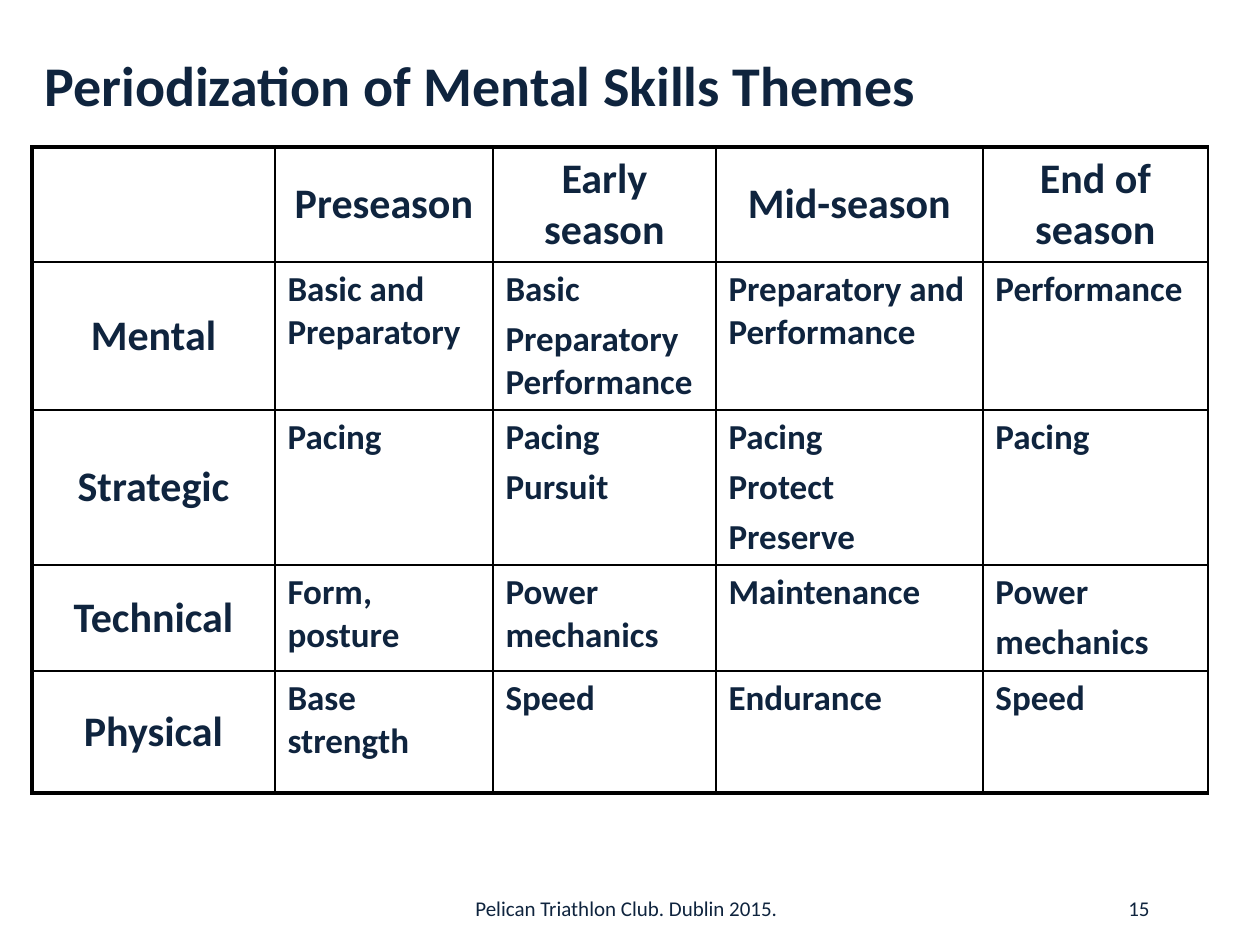
"""Build a slide with a season-by-season table of mental skills themes."""
from lxml import etree
from pptx import Presentation
from pptx.dml.color import RGBColor
from pptx.enum.text import MSO_ANCHOR, PP_ALIGN
from pptx.oxml.ns import qn
from pptx.util import Emu, Pt

NAVY = RGBColor(0x0F, 0x24, 0x3E)
BLACK = RGBColor(0, 0, 0)
THIN, THICK = 1, 2.25
PX = 914400 / 126


def write(tf, lines, size, bold, align, before=0):
    for i, line in enumerate(lines):
        p = tf.paragraphs[0] if i == 0 else tf.add_paragraph()
        p.alignment = align
        p.space_before = Pt(before)
        r = p.add_run()
        r.text = line
        for name, value in {"name": "Calibri", "size": Pt(size), "bold": bold}.items():
            setattr(r.font, name, value)
        r.font.color.rgb = NAVY


def border(cell, widths):
    tc_pr = cell._tc.get_or_add_tcPr()
    for side, width in widths.items():
        ln = etree.SubElement(tc_pr, qn(f"a:ln{side}"), w=str(Pt(width)))
        fill = etree.SubElement(ln, qn("a:solidFill"))
        etree.SubElement(fill, qn("a:srgbClr"), val=str(BLACK))


prs = Presentation()
prs.slide_width, prs.slide_height = Emu(round(1260 * PX)), Emu(round(945 * PX))
s = prs.slides.add_slide(prs.slide_layouts[6])

texts = [
    ("Periodization of Mental Skills Themes", (32, 21, 1081, 126), 32, True, PP_ALIGN.LEFT),
    ("Pelican Triathlon Club. Dublin 2015.", (427, 877, 399, 63), 12, False, PP_ALIGN.CENTER),
    ("15", (900, 877, 262, 63), 12, False, PP_ALIGN.RIGHT),
]
for text, box, size, bold, align in texts:
    tf = s.shapes.add_textbox(*(Emu(round(n * PX)) for n in box)).text_frame
    tf.word_wrap = True
    tf.vertical_anchor = MSO_ANCHOR.MIDDLE
    write(tf, [text], size, bold, align)

col_widths = [243, 218, 223, 267, 225]
row_heights = [115, 148, 155, 106, 122]
rows = [
    ["", "Preseason", "Early season", "Mid-season", "End of season"],
    ["Mental", "Basic and Preparatory", "Basic\nPreparatory Performance",
     "Preparatory and Performance", "Performance"],
    ["Strategic", "Pacing", "Pacing\nPursuit", "Pacing\nProtect\nPreserve", "Pacing"],
    ["Technical", "Form, posture", "Power mechanics", "Maintenance", "Power\nmechanics"],
    ["Physical", "Base strength", "Speed", "Endurance", "Speed"],
]
frame = (32, 147, sum(col_widths), sum(row_heights))
table = s.shapes.add_table(len(rows), len(col_widths), *(Emu(round(n * PX)) for n in frame)).table
table.first_row = table.horz_banding = False
for col, width in zip(table.columns, col_widths):
    col.width = Emu(round(width * PX))
for row, height in zip(table.rows, row_heights):
    row.height = Emu(round(height * PX))

for i, row in enumerate(rows):
    for j, text in enumerate(row):
        cell = table.cell(i, j)
        border(cell, {
            "L": THICK if j == 0 else THIN,
            "R": THIN,
            "T": THICK if i == 0 else THIN,
            "B": THICK if i == len(rows) - 1 else THIN,
        })
        cell.fill.background()
        heading = i == 0 or j == 0
        cell.vertical_anchor = MSO_ANCHOR.MIDDLE if heading else MSO_ANCHOR.TOP
        size = 24 if heading else 20
        align = PP_ALIGN.CENTER if heading else PP_ALIGN.LEFT
        if text:
            write(cell.text_frame, text.split("\n"), size, True, align, size * 0.2)

prs.save("out.pptx")
